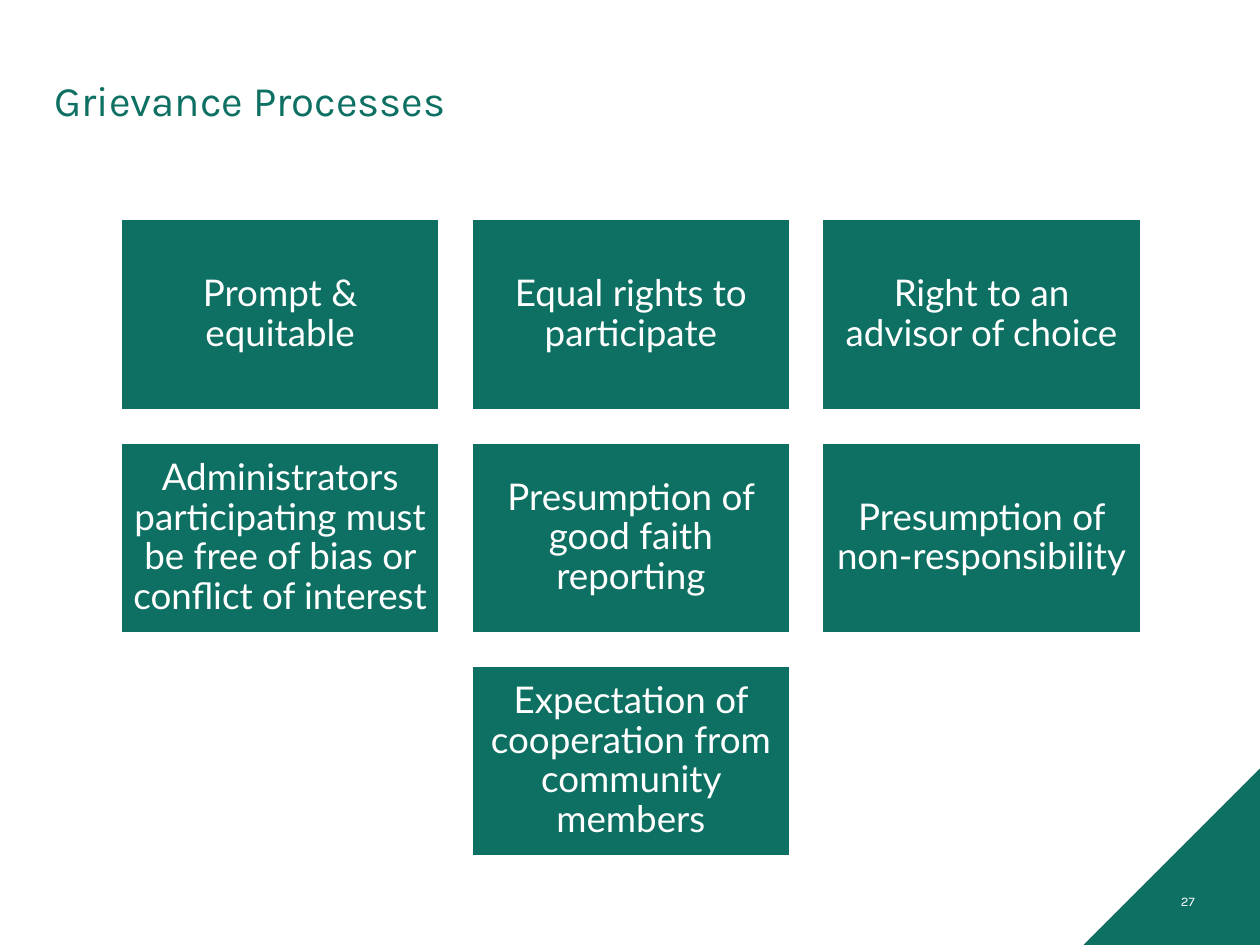
from pptx import Presentation
from pptx.dml.color import RGBColor
from pptx.enum.shapes import MSO_SHAPE
from pptx.enum.text import MSO_ANCHOR, PP_ALIGN
from pptx.util import Pt

GREEN, WHITE = "0D7062", "FFFFFF"
ROWS = [
    ["Prompt & equitable", "Equal rights to participate",
     "Right to an advisor of choice"],
    ["Administrators participating must be free of bias or conflict of interest",
     "Presumption of good faith reporting",
     "Presumption of non-responsibility"],
    ["Expectation of cooperation from community members"],
]


def paint(target, color):
    target.rgb = RGBColor.from_string(color)


def fill(shape, color):
    shape.shadow.inherit = False
    shape.fill.solid()
    paint(shape.fill.fore_color, color)


def write(shape, text, font, size, color, align, pads):
    """Set one middle-anchored paragraph; pads are left, top, right, bottom."""
    frame = shape.text_frame
    frame.word_wrap = True
    frame.vertical_anchor = MSO_ANCHOR.MIDDLE
    (frame.margin_left, frame.margin_top,
     frame.margin_right, frame.margin_bottom) = [Pt(pad) for pad in pads]
    frame.text = text
    line = frame.paragraphs[0]
    line.alignment = align
    line.font.name, line.font.size = font, Pt(size)
    paint(line.font.color, color)
    return line


def add_corner(slide, left, top, side):
    shape = slide.shapes.add_shape(
        MSO_SHAPE.RIGHT_TRIANGLE, Pt(left), Pt(top), Pt(side), Pt(side))
    shape.element.spPr.xfrm.set("flipH", "1")
    fill(shape, GREEN)
    shape.line.fill.background()


def add_title(slide, left, top, width, height):
    title = slide.shapes.title
    title.left, title.top = Pt(left), Pt(top)
    title.width, title.height = Pt(width), Pt(height)
    line = write(title, "Grievance Processes", "Karla", 24, GREEN,
                 PP_ALIGN.LEFT, (0, 3.6, 7.2, 3.6))
    line.line_spacing = 0.9


def add_card(slide, text, left, top, width, height):
    card = slide.shapes.add_shape(
        MSO_SHAPE.RECTANGLE, Pt(left), Pt(top), Pt(width), Pt(height))
    fill(card, GREEN)
    paint(card.line.color, WHITE)
    card.line.width = Pt(1.5)
    line = write(card, text, "Lato", 21, WHITE, PP_ALIGN.CENTER, [6.3] * 4)
    line.line_spacing = 0.9


def add_grid(slide, left, top, width, height, gap=18.2):
    """Fill the box with rows of equal cards, each row centred."""
    most = max(len(row) for row in ROWS)
    wide = (width - gap * (most - 1)) / most
    high = (height - gap * (len(ROWS) - 1)) / len(ROWS)
    for i, row in enumerate(ROWS):
        start = left + (most - len(row)) * (wide + gap) / 2
        for j, text in enumerate(row):
            add_card(slide, text, start + j * (wide + gap),
                     top + i * (high + gap), wide, high)


def add_number(slide, left, top, width, height):
    box = slide.shapes.add_textbox(Pt(left), Pt(top), Pt(width), Pt(height))
    write(box, "27", "Karla", 7.5, WHITE, PP_ALIGN.RIGHT, (7.2, 3.6, 7.2, 3.6))


def main():
    deck = Presentation()
    deck.slide_width, deck.slide_height = Pt(720), Pt(540)
    slide = deck.slides.add_slide(deck.slide_layouts[5])
    add_corner(slide, 619.2, 439.2, 100.8)
    add_title(slide, 31, 28.8, 659.5, 59.8)
    add_grid(slide, 69, 125.2, 583, 364.4)
    add_number(slide, 527.8, 500.4, 162, 28.8)
    deck.save("out.pptx")


if __name__ == "__main__":
    main()
